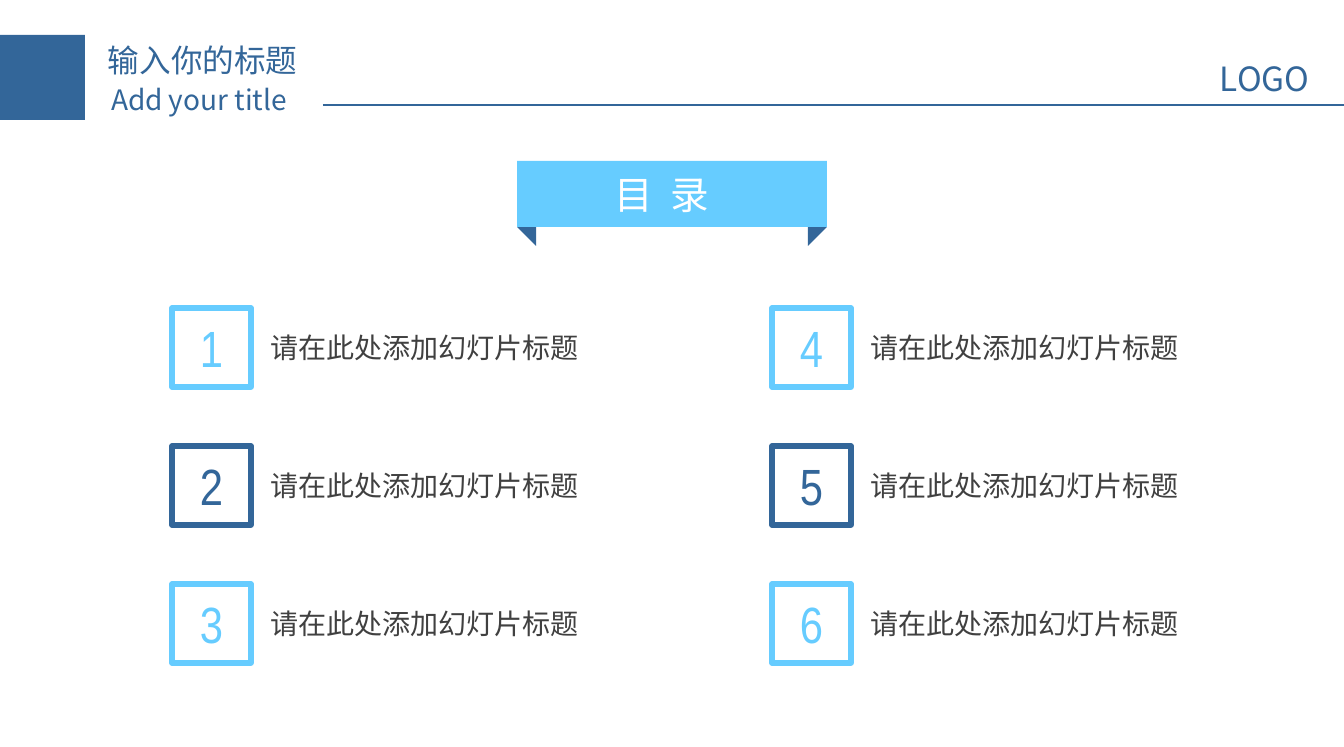
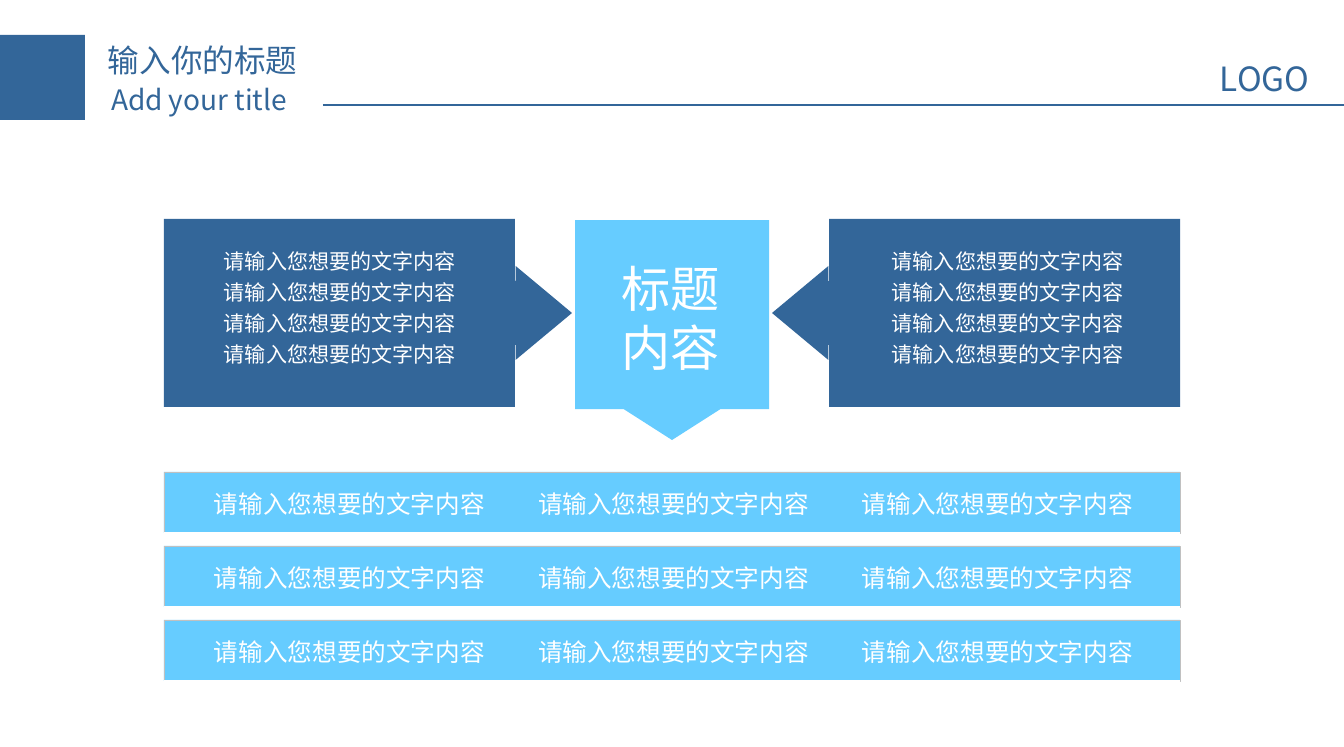
import lxml.etree
import pptx
import pptx.dml.color
import pptx.enum.shapes
import pptx.enum.text
import pptx.oxml.ns
import pptx.util

EMU_PER_PX = 7234
SLIDE_SIZE = (1344, 747)
COLORS = {
    "navy": "336699",
    "sky": "66CCFF",
    "white": "FFFFFF",
    "silver": "C0C0C0",
    "text": "404040",
}
CJK_FONT = "Noto Sans CJK SC"
SHAPES = pptx.enum.shapes.MSO_SHAPE
ALIGN = pptx.enum.text.PP_ALIGN
ANCHOR = pptx.enum.text.MSO_ANCHOR
BODY_TEXT = "请输入您想要的文字内容"


def px(length):
    return pptx.util.Emu(length * EMU_PER_PX)


def rgb(name):
    return pptx.dml.color.RGBColor.from_string(COLORS[name])


class Deck:
    """Holds the style and the slide being drawn."""

    def __init__(self):
        self.presentation = pptx.Presentation()
        self.presentation.slide_width, self.presentation.slide_height = map(px, SLIDE_SIZE)
        self.slide = None

    def new_slide(self):
        self.slide = self.presentation.slides.add_slide(self.presentation.slide_layouts[6])
        self.header()

    def header(self):
        self.shape((0, 35, 85, 85), fill="navy")
        self.text((98, 36, 219, 50), "输入你的标题", 18, "navy")
        self.text((101, 78, 219, 47), "Add your title", 16, "navy")
        self.line(323, 1344, 105, "navy", 0.75)
        self.text((1210, 53, 115, 53), "LOGO", 19, "navy")

    def shape(self, box, kind=SHAPES.RECTANGLE, fill=None, outline=None, width=0, rotation=0):
        shape = self.slide.shapes.add_shape(kind, *map(px, box))
        shape.shadow.inherit = False
        shape.rotation = rotation
        if fill:
            shape.fill.solid()
            shape.fill.fore_color.rgb = rgb(fill)
        else:
            shape.fill.background()
        if outline:
            shape.line.color.rgb = rgb(outline)
            shape.line.width = pptx.util.Pt(width)
        else:
            shape.line.fill.background()
        return shape

    def callout(self, box, fill, rotation, head):
        shape = self.shape(box, SHAPES.UP_ARROW_CALLOUT, fill, rotation=rotation)
        for index, value in enumerate((0.34, 0.25, head, 0.86)):
            shape.adjustments[index] = value

    def line(self, left, right, y, color, width):
        connector = self.slide.shapes.add_connector(
            pptx.enum.shapes.MSO_CONNECTOR.STRAIGHT, px(left), px(y), px(right), px(y))
        connector.line.color.rgb = rgb(color)
        connector.line.width = pptx.util.Pt(width)
        lxml.etree.SubElement(connector._element.spPr, pptx.oxml.ns.qn("a:effectLst"))

    def text(self, box, text, size, color, **style):
        textbox = self.slide.shapes.add_textbox(*map(px, box))
        self.fill_text(textbox, text, size, color, **style)

    def fill_text(self, shape, text, size, color, font=CJK_FONT, align=ALIGN.LEFT,
                  anchor=ANCHOR.TOP, space_after=0, tracking=0):
        frame = shape.text_frame
        frame.word_wrap = True
        frame.vertical_anchor = anchor
        frame.margin_left = frame.margin_right = px(10)
        frame.margin_top = frame.margin_bottom = px(5)
        frame.text = text
        for paragraph in frame.paragraphs:
            paragraph.alignment = align
            paragraph.space_after = pptx.util.Pt(space_after)
            for run in paragraph.runs:
                run.font.size = pptx.util.Pt(size)
                run.font.color.rgb = rgb(color)
                run.font.name = font
                properties = run._r.get_or_add_rPr()
                east_asian = lxml.etree.SubElement(properties, pptx.oxml.ns.qn("a:ea"))
                east_asian.set("typeface", CJK_FONT)
                if tracking:
                    properties.set("spc", str(tracking))


def contents_slide(deck):
    deck.new_slide()

    # Ribbon with folded ends
    for left, rotation in ((517, 180), (808, 90)):
        deck.shape((left, 227, 19, 19), SHAPES.RIGHT_TRIANGLE, "navy", rotation=rotation)
    deck.shape((517, 161, 310, 66), fill="sky")
    deck.text((592, 166, 140, 57), "目 录", 22, "white", font="Calibri",
              align=ALIGN.CENTER, tracking=250)

    # Six numbered entries, filled column by column
    for index in range(6):
        column, row = divmod(index, 3)
        left, top = 172 + 600 * column, 308 + 138 * row
        color = "navy" if row == 1 else "sky"
        square = deck.shape((left, top, 79, 79), outline=color, width=3)
        deck.fill_text(square, str(index + 1), 29, color, font="Arial Narrow",
                       align=ALIGN.CENTER, anchor=ANCHOR.MIDDLE)
        deck.text((left + 89, top + 17, 337, 45), "请在此处添加幻灯片标题", 16, "text",
                  anchor=ANCHOR.MIDDLE)


def summary_slide(deck):
    deck.new_slide()

    # Bars, each with three texts
    for row in range(3):
        top = 472 + 74 * row
        deck.shape((164, top, 1016, 61), fill="sky", outline="silver", width=0.25)
        deck.line(164, 1180, top + 61, "white", 1.5)
        for column in range(3):
            deck.text((204 + 324 * column, top + 12, 304, 39), BODY_TEXT, 14, "white")

    # Side callouts pointing at the centre
    side_text = "\n".join([BODY_TEXT] * 4)
    for left, text_left, rotation in ((274, 214, 90), (882, 882, 270)):
        deck.callout((left, 109, 188, 408), "navy", rotation, 0.3)
        deck.text((text_left, 244, 277, 144), side_text, 12, "white", space_after=3.1)

    # Centre callout pointing down
    deck.callout((575, 220, 194, 220), "sky", 180, 0.16)
    deck.text((611, 253, 121, 128), "标题\n内容", 28, "white")


def main():
    deck = Deck()
    contents_slide(deck)
    summary_slide(deck)
    deck.presentation.save("out.pptx")


if __name__ == "__main__":
    main()
